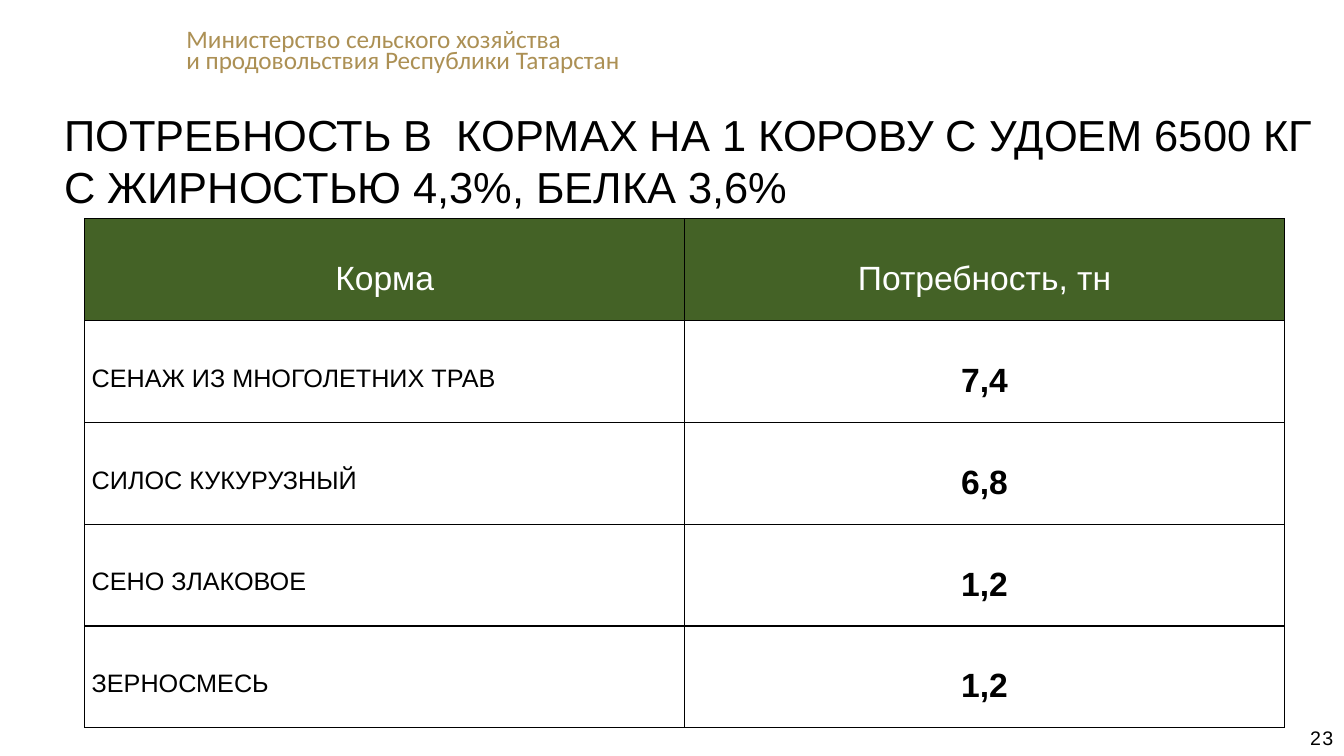
"""Build the slide with feed requirements for one dairy cow."""
from dataclasses import dataclass

import lxml.etree
import pptx
import pptx.dml.color
import pptx.enum.text
import pptx.oxml.ns
import pptx.util

Inches = pptx.util.Inches
Pt = pptx.util.Pt
ALIGN = pptx.enum.text.PP_ALIGN
AUTO_SIZE = pptx.enum.text.MSO_AUTO_SIZE
qn = pptx.oxml.ns.qn

COLORS = {"gold": "AC9054", "green": "446226", "black": "000000", "white": "FFFFFF"}


@dataclass
class Style:
    size: float
    color: str = "black"
    font: str = "Arial"
    bold: bool = False
    align: ALIGN = ALIGN.LEFT
    line_spacing: float = 1.0
    tracking: int = 0
    indent: float = 0


@dataclass
class Label:
    left: float
    top: float
    width: float
    height: float
    lines: list[str]
    style: Style
    wrap: bool = False
    grow: bool = True
    inset: bool = True


@dataclass
class Feed:
    name: str
    tonnes: str


LABELS = [
    Label(1.75, 0.26, 4.55, 0.54,
          ["Министерство сельского хозяйства", "и продовольствия Республики Татарстан"],
          Style(18, "gold", "Calibri", line_spacing=0.7)),
    Label(12.98, 7.2, 0.26, 0.23, ["23"],
          Style(14, align=ALIGN.CENTER, tracking=100), grow=False, inset=False),
    Label(0.35, 1.02, 12.97, 1.14,
          ["ПОТРЕБНОСТЬ В  КОРМАХ НА 1 КОРОВУ С УДОЕМ 6500 КГ С ЖИРНОСТЬЮ 4,3%, БЕЛКА 3,6%"],
          Style(31, indent=0.19), wrap=True),
]
HEADER = Feed("Корма", "Потребность, тн")
FEEDS = [
    Feed("СЕНАЖ ИЗ МНОГОЛЕТНИХ ТРАВ", "7,4"),
    Feed("СИЛОС КУКУРУЗНЫЙ", "6,8"),
    Feed("СЕНО ЗЛАКОВОЕ", "1,2"),
    Feed("ЗЕРНОСМЕСЬ", "1,2"),
]
HEADER_STYLE = Style(24, "white", align=ALIGN.CENTER, line_spacing=1.5)
NAME_STYLE = Style(18, line_spacing=1.5)
VALUE_STYLE = Style(24, bold=True, align=ALIGN.CENTER, line_spacing=1.5)


def rgb(name: str) -> pptx.dml.color.RGBColor:
    return pptx.dml.color.RGBColor.from_string(COLORS[name])


def write(tf, lines: list[str], style: Style) -> None:
    for i, line in enumerate(lines):
        p = tf.add_paragraph() if i else tf.paragraphs[0]
        p.alignment = style.align
        p.line_spacing = style.line_spacing
        if style.indent:
            pPr = p._p.get_or_add_pPr()
            pPr.set("marL", str(Inches(style.indent)))
            pPr.set("indent", "0")
        r = p.add_run()
        r.text = line
        r.font.name = style.font
        r.font.size = Pt(style.size)
        r.font.bold = style.bold
        r.font.color.rgb = rgb(style.color)
        if style.tracking:
            r._r.get_or_add_rPr().set("spc", str(style.tracking))


def add_label(s, label: Label) -> None:
    sp = s.shapes.add_textbox(Inches(label.left), Inches(label.top),
                              Inches(label.width), Inches(label.height))
    tf = sp.text_frame
    tf.word_wrap = label.wrap
    tf.auto_size = AUTO_SIZE.SHAPE_TO_FIT_TEXT if label.grow else AUTO_SIZE.NONE
    if not label.inset:
        tf.margin_left = tf.margin_top = tf.margin_right = tf.margin_bottom = 0
    write(tf, label.lines, label.style)


def add_borders(cell) -> None:
    tcPr = cell._tc.get_or_add_tcPr()
    for side in ("a:lnL", "a:lnR", "a:lnT", "a:lnB"):
        ln = lxml.etree.SubElement(tcPr, qn(side), w=str(Pt(1)))
        fill = lxml.etree.SubElement(ln, qn("a:solidFill"))
        lxml.etree.SubElement(fill, qn("a:srgbClr"), val=COLORS["black"])


def fill_cell(cell, text: str, style: Style, is_header: bool) -> None:
    cell.margin_left = cell.margin_right = Inches(0.07)
    cell.margin_top = cell.margin_bottom = 0
    cell.vertical_anchor = pptx.enum.text.MSO_ANCHOR.MIDDLE
    add_borders(cell)
    if is_header:
        cell.fill.solid()
        cell.fill.fore_color.rgb = rgb("green")
    else:
        cell.fill.background()
    write(cell.text_frame, [text], style)


def add_feed_table(s) -> None:
    rows = [HEADER, *FEEDS]
    table = s.shapes.add_table(len(rows), 2, Inches(0.84), Inches(2.17),
                               Inches(11.9), Inches(5.05)).table
    table.horz_banding = False
    for i, feed in enumerate(rows):
        is_header = i == 0
        name_style = HEADER_STYLE if is_header else NAME_STYLE
        value_style = HEADER_STYLE if is_header else VALUE_STYLE
        fill_cell(table.cell(i, 0), feed.name, name_style, is_header)
        fill_cell(table.cell(i, 1), feed.tonnes, value_style, is_header)


def main() -> None:
    prs = pptx.Presentation()
    prs.slide_width, prs.slide_height = Inches(13.33), Inches(7.5)
    s = prs.slides.add_slide(prs.slide_layouts[6])
    for label in LABELS:
        add_label(s, label)
    add_feed_table(s)
    prs.save("out.pptx")


if __name__ == "__main__":
    main()
